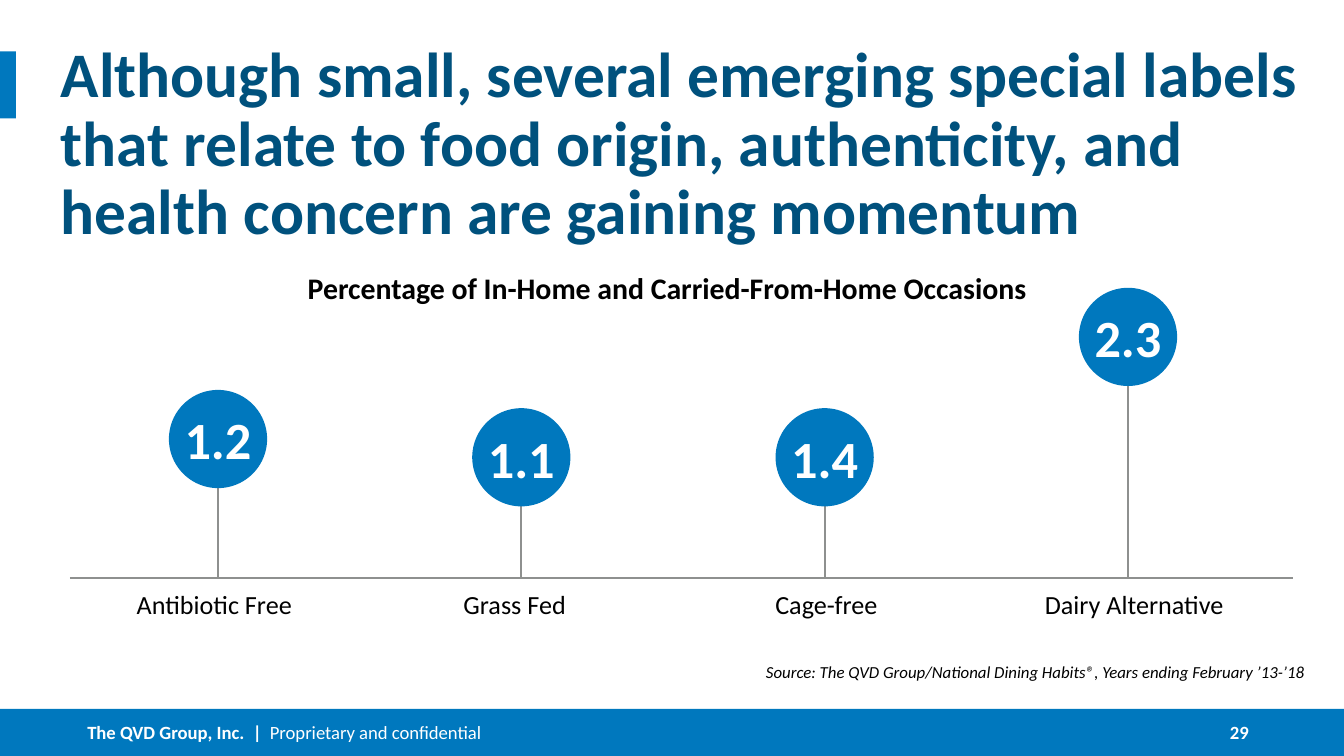
"""Build a lollipop slide on the share of occasions with special food labels."""
from lxml import etree
from pptx import Presentation
from pptx.dml.color import RGBColor
from pptx.enum import shapes, text
from pptx.oxml import ns
from pptx.util import Pt

COLORS = {"blue": "0078BE", "navy": "00517D", "gray": "8E908F",
          "white": "FFFFFF", "black": "000000"}
LABELS = [("Antibiotic Free", "1.2", 208.9, 166.3),
          ("Grass Fed", "1.1", 218.7, 155.5),
          ("Cage-free", "1.4", 218.7, 178.6),
          ("Dairy Alternative", "2.3", 154.2, 151.2)]
BASELINE = 309.5
FIRST_X, STEP = 116.8, 162.5
DIAMETER = 52.6


def rgb(name):
    """Return the named colour."""
    return RGBColor.from_string(COLORS[name])


def setup_frame(tf, anchor="TOP", insets=(0, 0, 0, 0), wrap=True):
    """Set anchor, insets and wrapping of a text frame."""
    tf.word_wrap = wrap
    tf.auto_size = text.MSO_AUTO_SIZE.NONE
    tf.vertical_anchor = text.MSO_ANCHOR[anchor]
    tf.margin_left, tf.margin_top, tf.margin_right, tf.margin_bottom = map(Pt, insets)


def write(tf, content, size=14, color="black", bold=False, italic=False,
          align="LEFT", spacing=None):
    """Add a formatted run to the first paragraph of a text frame."""
    p = tf.paragraphs[0]
    p.alignment = text.PP_ALIGN[align]
    if spacing:
        p.line_spacing = spacing
    r = p.add_run()
    r.text = content
    r.font.name = "Calibri"
    r.font.size = Pt(size)
    r.font.bold = bold
    r.font.italic = italic
    r.font.color.rgb = rgb(color)


def add_label(s, box, content, anchor="TOP", insets=(0, 0, 0, 0), **fmt):
    """Add a text box and return its text frame."""
    tf = s.shapes.add_textbox(*map(Pt, box)).text_frame
    setup_frame(tf, anchor, insets)
    write(tf, content, **fmt)
    return tf


def add_block(s, kind, box):
    """Add a solid blue shape without outline."""
    sp = s.shapes.add_shape(shapes.MSO_SHAPE[kind], *map(Pt, box))
    sp.shadow.inherit = False
    sp.fill.solid()
    sp.fill.fore_color.rgb = rgb("blue")
    sp.line.fill.background()
    return sp


def add_line(s, x1, y1, x2, y2, width):
    """Add a straight gray line."""
    cxn = s.shapes.add_connector(shapes.MSO_CONNECTOR.STRAIGHT,
                                 *map(Pt, (x1, y1, x2, y2)))
    cxn.line.color.rgb = rgb("gray")
    cxn.line.width = Pt(width)
    etree.SubElement(cxn._element.spPr, ns.qn("a:effectLst"))


def add_title(s, content):
    """Place and fill the title placeholder."""
    title = s.shapes.title
    title.left, title.top, title.width, title.height = map(Pt, (32.6, 23, 666, 36))
    setup_frame(title.text_frame)
    write(title.text_frame, content, size=34, color="navy", bold=True, spacing=0.9)


def add_categories(s):
    """Add the one-row table of category names."""
    widths = [width for *_, width in LABELS]
    frame = s.shapes.add_table(1, len(LABELS), Pt(31.7), Pt(BASELINE),
                               Pt(sum(widths)), Pt(29))
    table = frame.table
    table.first_row = table.horz_banding = False
    table.rows[0].height = Pt(29)
    for column, cell, (name, _, _, width) in zip(table.columns, table.rows[0].cells, LABELS):
        column.width = Pt(width)
        cell.fill.background()
        cell.vertical_anchor = text.MSO_ANCHOR.MIDDLE
        cell.margin_left = cell.margin_top = cell.margin_right = Pt(0.7)
        cell.margin_bottom = Pt(0)
        write(cell.text_frame, name, align="CENTER")


def add_lollipop(s, x, top, value):
    """Add a stem and a circle that carries its value."""
    add_line(s, x, BASELINE, x, top + DIAMETER, 1)
    sp = add_block(s, "OVAL", (x - DIAMETER / 2, top, DIAMETER, DIAMETER))
    setup_frame(sp.text_frame, "MIDDLE", wrap=False)
    write(sp.text_frame, value, size=28, color="white", bold=True, align="CENTER")


def add_footer(s):
    """Add the footer bar with its owner and page number."""
    add_block(s, "RECTANGLE", (0, 379.8, 720, 25.2))
    tf = add_label(s, (46.8, 379.8, 296, 25.2), "The QVD Group, Inc.  |  ",
                   "MIDDLE", size=10, color="white", bold=True)
    write(tf, "Proprietary and confidential", size=10, color="white")
    add_label(s, (633, 379.8, 46.8, 25.2), "29", "MIDDLE", (0, 3.6, 10.8, 3.6),
              size=10, color="white", bold=True, align="RIGHT")


def main():
    """Build and save the slide."""
    prs = Presentation()
    prs.slide_width, prs.slide_height = Pt(720), Pt(405)
    s = prs.slides.add_slide(prs.slide_layouts[5])
    add_footer(s)
    add_block(s, "RECTANGLE", (0, 27.5, 8.6, 36))
    add_title(s, "Although small, several emerging special labels that relate to "
                 "food origin, authenticity, and health concern are gaining momentum")
    add_label(s, (32.6, 344.2, 666, 20.9),
              "Source: The QVD Group/National Dining Habits®, "
              "Years ending February ’13-’18",
              "BOTTOM", size=9, italic=True, align="RIGHT", spacing=0.85)
    add_categories(s)
    add_line(s, 37.5, BASELINE, 692.6, BASELINE, 1.25)
    for i, (_, value, top, _) in enumerate(LABELS):
        add_lollipop(s, FIRST_X + i * STEP, top, value)
    add_label(s, (149.8, 141.1, 415.4, 26.6),
              "Percentage of In-Home and Carried-From-Home Occasions",
              insets=(7.2, 3.6, 7.2, 3.6), size=16, bold=True, align="CENTER")
    prs.save("out.pptx")


if __name__ == "__main__":
    main()
